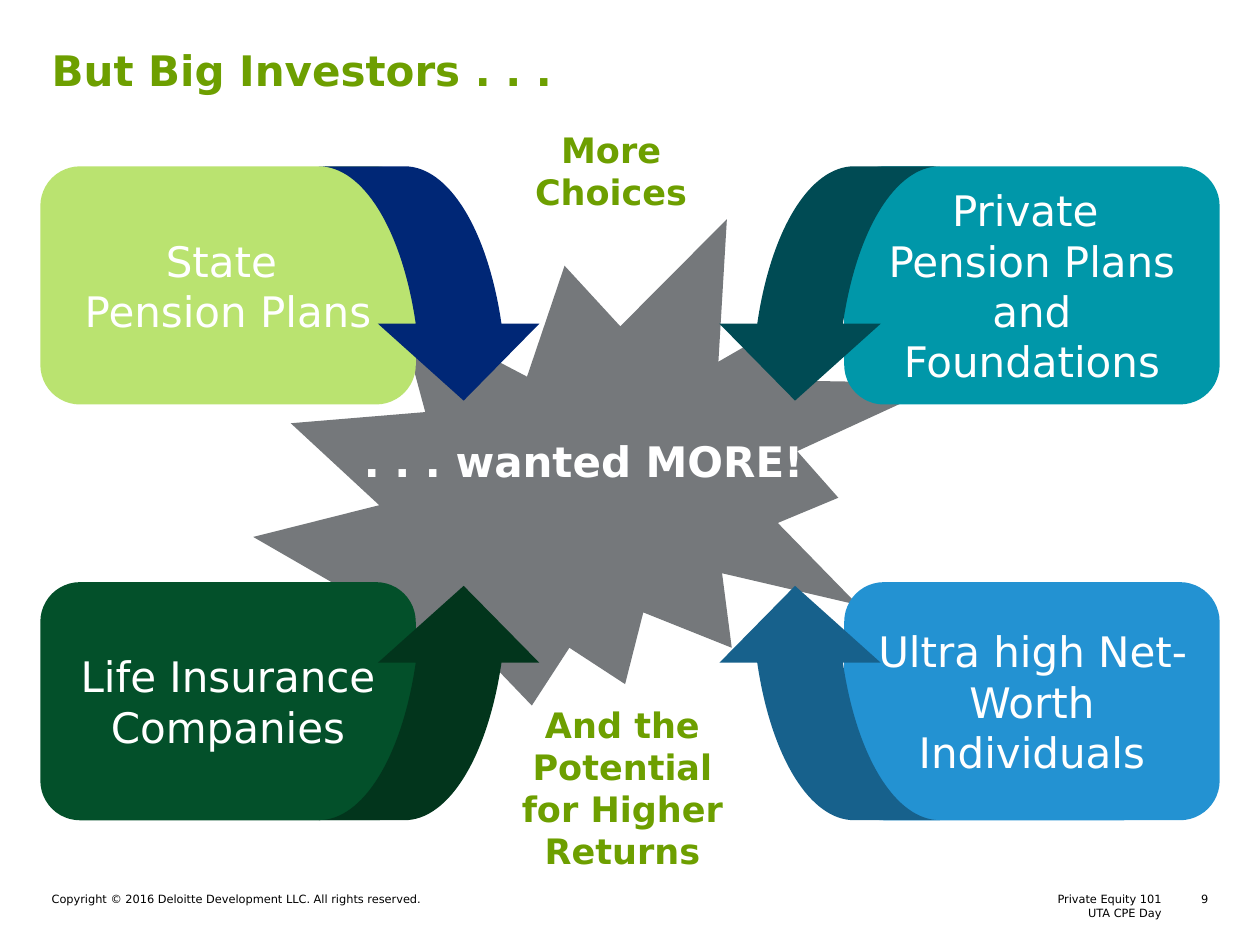
from lxml import etree
from pptx import Presentation
from pptx.dml.color import RGBColor
from pptx.enum import shapes, text
from pptx.oxml import ns
from pptx.util import Inches, Pt

COLORS = {
    "green": "6D9F00", "white": "FFFFFF", "black": "000000", "burst": "75787B",
    "lime": "BAE370", "navy": "002776", "teal": "0097A9", "dark teal": "004B54",
    "forest": "03502A", "dark forest": "02351C", "blue": "2392D2", "dark blue": "17618C",
}
FONT = "DejaVu Sans"
LEFT, CENTER, RIGHT = text.PP_ALIGN.LEFT, text.PP_ALIGN.CENTER, text.PP_ALIGN.RIGHT
TOP, MIDDLE = text.MSO_ANCHOR.TOP, text.MSO_ANCHOR.MIDDLE


def write(shape, content, size=24, color="white", bold=False, align=LEFT,
          anchor=TOP, inset=0.0):
    """Fill a shape with text; \\n starts a paragraph, \\v breaks a line."""
    frame = shape.text_frame
    frame.text = content
    frame.word_wrap = True
    frame.auto_size = text.MSO_AUTO_SIZE.NONE
    frame.vertical_anchor = anchor
    frame.margin_left = frame.margin_right = Inches(inset)
    frame.margin_top = frame.margin_bottom = Inches(inset / 2)
    for paragraph in frame.paragraphs:
        paragraph.alignment = align
        paragraph.font.name = FONT
        paragraph.font.size = Pt(size)
        paragraph.font.bold = bold
        paragraph.font.color.rgb = RGBColor.from_string(COLORS[color])


def paint(shape, color):
    shape.shadow.inherit = False
    shape.fill.solid()
    shape.fill.fore_color.rgb = RGBColor.from_string(COLORS[color])
    shape.line.fill.background()


presentation = Presentation()
presentation.slide_width, presentation.slide_height = Inches(10), Inches(7.5)
slide = presentation.slides.add_slide(presentation.slide_layouts[5])

# Title
title = slide.shapes.title
title.left, title.top = Inches(0.41), Inches(0.35)
title.width, title.height = Inches(9.18), Inches(0.76)
write(title, "But Big Investors . . .", color="green", bold=True)

# Diagram with its central burst
diagram = slide.shapes.add_group_shape()
burst = diagram.shapes.add_shape(shapes.MSO_SHAPE.EXPLOSION2, Inches(2.01), Inches(1.74),
                                 Inches(5.49), Inches(4.23))
paint(burst, "burst")

# Outline of the upper left arrow: corners and curve control points
ARROW_POINTS = [
    (3.68, 3.18), (3, 2.57), (3.3, 2.57),
    (3.19, 1.82), (2.88, 1.32), (2.53, 1.32),
    (3.21, 1.32),
    (3.56, 1.32), (3.87, 1.82), (3.98, 2.57),
    (4.28, 2.57), (3.68, 3.18),
]
CURVE_STARTS = (2, 6)  # segments that begin a three-point curve

# Investor boxes, each with an arrow mirrored about the centre of the diagram
BOX_WIDTH, BOX_HEIGHT = 2.98, 1.89
MIRROR_X, MIRROR_Y = 9.99, 7.83
investors = [
    ("State \vPension Plans", "lime", "navy", False, False),
    ("Private \vPension Plans and Foundations", "teal", "dark teal", True, False),
    ("Life Insurance Companies", "forest", "dark forest", False, True),
    ("Ultra high Net-Worth Individuals", "blue", "dark blue", True, True),
]
for label, box_color, arrow_color, on_right, at_bottom in investors:
    box = diagram.shapes.add_shape(
        shapes.MSO_SHAPE.ROUNDED_RECTANGLE,
        Inches(6.7 if on_right else 0.32), Inches(4.62 if at_bottom else 1.32),
        Inches(BOX_WIDTH), Inches(BOX_HEIGHT))
    paint(box, box_color)
    write(box, label, align=CENTER, anchor=MIDDLE, inset=0.1)

    points = [(Inches(MIRROR_X - x if on_right else x),
               Inches(MIRROR_Y - y if at_bottom else y)) for x, y in ARROW_POINTS]
    builder = diagram.shapes.build_freeform(*points[0])
    builder.add_line_segments(points[1:], close=True)
    arrow = builder.convert_to_shape()
    paint(arrow, arrow_color)

    # Turn each run of three control points into one Bezier curve
    segments = list(arrow.element.iter(ns.qn("a:lnTo")))
    for start in CURVE_STARTS:
        curve = etree.Element(ns.qn("a:cubicBezTo"))
        segments[start].addprevious(curve)
        for segment in segments[start:start + 3]:
            curve.append(segment[0])
            segment.getparent().remove(segment)

# Captions and footer
heading = {"size": 20, "color": "green", "bold": True, "align": CENTER}
small = {"size": 6.5, "color": "black"}
text_boxes = [
    (2.79, 3.41, 3.87, 0.5, ". . . wanted MORE!", {"bold": True, "inset": 0.1}),
    (3.99, 1.02, 1.72, 0.67, "More Choices", heading),
    (4.03, 5.58, 1.82, 1.35, "And the Potential for Higher Returns", heading),
    (0.41, 7.08, 4.39, 0.22,
     "Copyright © 2016 Deloitte Development LLC. All rights reserved.", small),
    (5.2, 7.08, 4.02, 0.22, "Private Equity 101\nUTA CPE Day", {**small, "align": RIGHT}),
    (9.34, 7.08, 0.25, 0.11, "9", {**small, "align": RIGHT}),
]
for left, top, width, height, content, style in text_boxes:
    text_box = slide.shapes.add_textbox(Inches(left), Inches(top), Inches(width), Inches(height))
    write(text_box, content, **style)

presentation.save("out.pptx")
